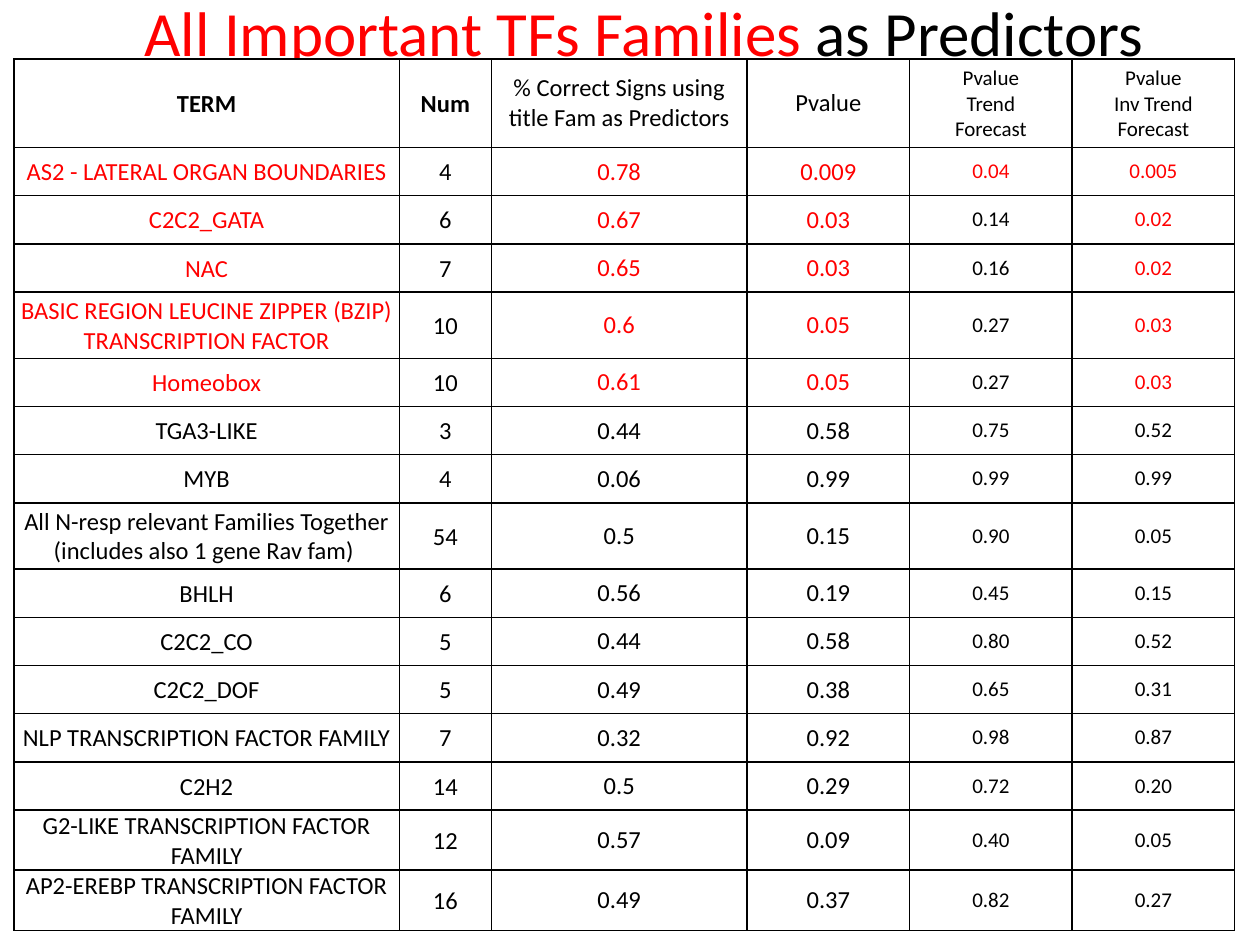
"""Build a slide that tabulates transcription factor families as predictors."""
from lxml import etree
from pptx import Presentation
from pptx.dml.color import RGBColor
from pptx.enum.text import MSO_ANCHOR, PP_ALIGN
from pptx.oxml.ns import qn
from pptx.util import Inches, Pt

CENTER = PP_ALIGN.CENTER
MIDDLE = MSO_ANCHOR.MIDDLE
RED = "FF0000"
BLACK = "000000"
WHITE = "FFFFFF"
HEADERS = ["TERM", "Num", "% Correct Signs using title Fam as Predictors", "Pvalue",
           "Pvalue\nTrend\nForecast", "Pvalue\nInv Trend\nForecast"]
FAMILIES = [
    ["AS2 - LATERAL ORGAN BOUNDARIES", "4", "0.78", "0.009", "0.04", "0.005"],
    ["C2C2_GATA", "6", "0.67", "0.03", "0.14", "0.02"],
    ["NAC", "7", "0.65", "0.03", "0.16", "0.02"],
    ["BASIC REGION LEUCINE ZIPPER (BZIP) TRANSCRIPTION FACTOR",
     "10", "0.6", "0.05", "0.27", "0.03"],
    ["Homeobox", "10", "0.61", "0.05", "0.27", "0.03"],
    ["TGA3-LIKE", "3", "0.44", "0.58", "0.75", "0.52"],
    ["MYB", "4", "0.06", "0.99", "0.99", "0.99"],
    ["All N-resp relevant Families Together (includes also 1 gene Rav fam) ",
     "54", "0.5", "0.15", "0.90", "0.05"],
    ["BHLH", "6", "0.56", "0.19", "0.45", "0.15"],
    ["C2C2_CO", "5", "0.44", "0.58", "0.80", "0.52"],
    ["C2C2_DOF", "5", "0.49", "0.38", "0.65", "0.31"],
    ["NLP TRANSCRIPTION FACTOR FAMILY", "7", "0.32", "0.92", "0.98", "0.87"],
    ["C2H2", "14", "0.5", "0.29", "0.72", "0.20"],
    ["G2-LIKE TRANSCRIPTION FACTOR FAMILY", "12", "0.57", "0.09", "0.40", "0.05"],
    ["AP2-EREBP TRANSCRIPTION FACTOR FAMILY", "16", "0.49", "0.37", "0.82", "0.27"],
]
COLUMN_WIDTHS = [30.6, 7.3, 20.3, 12.9, 12.9, 12.9]
HEADER_HEIGHT, ROW_HEIGHT, TALL_HEIGHT = 6.7, 3.83, 5.25
TALL_ROWS = (4, 8)


def write_text(paragraph, text, size=14, color=BLACK, bold=False):
    """Add one centred, formatted run to a paragraph."""
    paragraph.alignment = CENTER
    run = paragraph.add_run()
    run.text = text
    run.font.name = "Calibri"
    run.font.size = Pt(size)
    run.font.bold = bold
    run.font.color.rgb = RGBColor.from_string(color)


def draw_borders(cell, color=BLACK, width=1):
    """Draw a solid line on all four sides of a cell."""
    properties = cell._tc.get_or_add_tcPr()
    for side in ("a:lnL", "a:lnR", "a:lnT", "a:lnB"):
        line = etree.SubElement(properties, qn(side), w=str(Pt(width)))
        fill = etree.SubElement(line, qn("a:solidFill"))
        etree.SubElement(fill, qn("a:srgbClr"), val=color)


presentation = Presentation()
presentation.slide_width = Inches(10)
presentation.slide_height = Inches(7.5)
step = presentation.slide_width // 100
slide = presentation.slides.add_slide(presentation.slide_layouts[6])

title = slide.shapes.add_textbox(5 * step, int(-3.8 * step), 90 * step, int(12.5 * step))
title.text_frame.word_wrap = True
title.text_frame.vertical_anchor = MIDDLE
title.text_frame.margin_left = int(3.2 * step)
for text, color in (("All Important TFs Families", RED), (" as Predictors", BLACK)):
    write_text(title.text_frame.paragraphs[0], text, size=36, color=color)

row_heights = [HEADER_HEIGHT] + [
    TALL_HEIGHT if number in TALL_ROWS else ROW_HEIGHT
    for number in range(1, len(FAMILIES) + 1)]
table = slide.shapes.add_table(
    len(row_heights), len(COLUMN_WIDTHS), int(1.1 * step), int(4.7 * step),
    int(sum(COLUMN_WIDTHS) * step), int(sum(row_heights) * step)).table
table.first_row = False
table.horz_banding = False
for column, width in zip(table.columns, COLUMN_WIDTHS):
    column.width = int(width * step)
for row, height in zip(table.rows, row_heights):
    row.height = int(height * step)

for row_number, values in enumerate([HEADERS] + FAMILIES):
    is_header = row_number == 0
    significant = not is_header and float(values[3]) <= 0.05
    for column_number, value in enumerate(values):
        cell = table.cell(row_number, column_number)
        draw_borders(cell)
        cell.fill.solid()
        cell.fill.fore_color.rgb = RGBColor.from_string(WHITE)
        cell.vertical_anchor = MIDDLE
        if column_number < 2:
            cell.margin_left = cell.margin_right = cell.margin_top = Inches(0.01)
            cell.margin_bottom = 0
        red = significant and (column_number in (0, 2) or
                               column_number > 2 and float(value) <= 0.05)
        for line_number, text in enumerate(value.split("\n")):
            frame = cell.text_frame
            paragraph = frame.add_paragraph() if line_number else frame.paragraphs[0]
            write_text(paragraph, text, size=14 if column_number < 4 else 12,
                       color=RED if red else BLACK,
                       bold=is_header and column_number < 2)

presentation.save("out.pptx")
